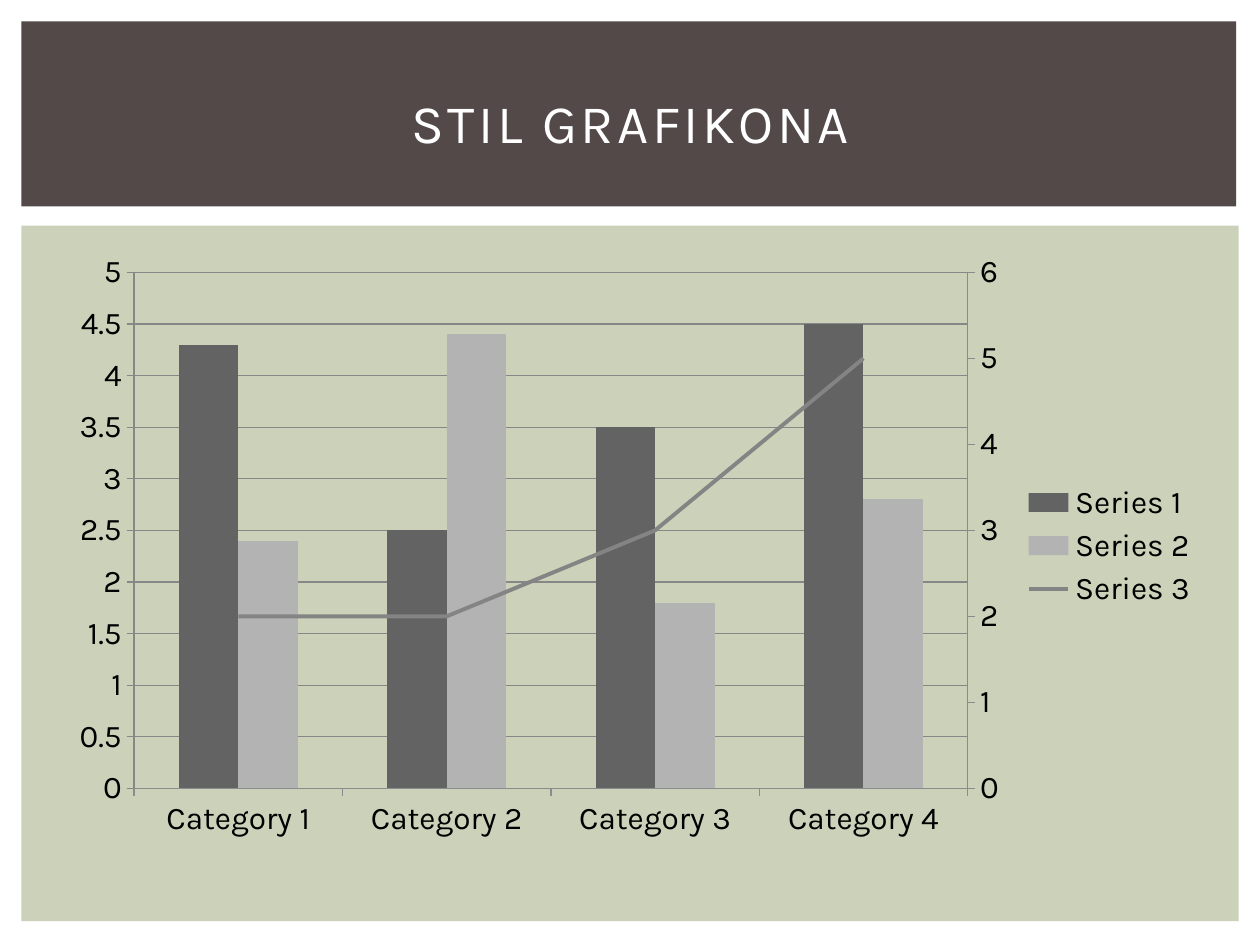
from lxml import etree
from pptx import Presentation
from pptx.chart.axis import ValueAxis
from pptx.chart.data import CategoryChartData
from pptx.dml.color import RGBColor
from pptx.enum.chart import (XL_CHART_TYPE, XL_LEGEND_POSITION,
                             XL_MARKER_STYLE, XL_TICK_MARK)
from pptx.enum.shapes import MSO_SHAPE
from pptx.enum.text import MSO_ANCHOR, PP_ALIGN
from pptx.oxml import parse_xml
from pptx.oxml.ns import nsdecls, qn
from pptx.util import Cm, Pt

COLUMNS = XL_CHART_TYPE.COLUMN_CLUSTERED
LEGEND_RIGHT = XL_LEGEND_POSITION.RIGHT
NO_MARKER = XL_MARKER_STYLE.NONE
TICK_OUT, TICK_NONE = XL_TICK_MARK.OUTSIDE, XL_TICK_MARK.NONE
RECTANGLE = MSO_SHAPE.RECTANGLE
MIDDLE, CENTER = MSO_ANCHOR.MIDDLE, PP_ALIGN.CENTER

FONT = "Karla"
COLORS = {
    "header": "534949", "panel": "CCD1B9", "title": "FFFFFF", "text": "000000",
    "axis": "8B8B8B", "Series 1": "636363", "Series 2": "B3B3B3",
    "Series 3": "848484",
}
CATEGORIES = [f"Category {number}" for number in range(1, 5)]
SERIES = {
    "Series 1": (4.3, 2.5, 3.5, 4.5),
    "Series 2": (2.4, 4.4, 1.8, 2.8),
    "Series 3": (2, 2, 3, 5),
}
PLOT_LAYOUT = {"x": 0.07, "y": 0.05, "w": 0.72, "h": 0.85}

LINE_PLOT = f"""<c:lineChart {nsdecls("c")}>
  <c:grouping val="standard"/><c:varyColors val="0"/>
  <c:marker val="1"/><c:axId val="5001"/><c:axId val="5002"/>
</c:lineChart>"""
RIGHT_AXIS = f"""<c:valAx {nsdecls("c")}>
  <c:axId val="5002"/><c:scaling><c:orientation val="minMax"/></c:scaling>
  <c:delete val="0"/><c:axPos val="r"/>
  <c:numFmt formatCode="General" sourceLinked="0"/>
  <c:tickLblPos val="nextTo"/><c:crossAx val="5001"/><c:crosses val="max"/>
</c:valAx>"""
HIDDEN_CATEGORY_AXIS = f"""<c:catAx {nsdecls("c")}>
  <c:axId val="5001"/><c:scaling><c:orientation val="minMax"/></c:scaling>
  <c:delete val="1"/><c:axPos val="b"/>
  <c:crossAx val="5002"/><c:crosses val="autoZero"/>
</c:catAx>"""


def color(name):
    return RGBColor.from_string(COLORS[name])


def set_values(target, values):
    for name, value in values.items():
        setattr(target, name, value)


def style_font(font, size, color_name):
    set_values(font, {"name": FONT, "size": Pt(size), "bold": False})
    font.color.rgb = color(color_name)


def style_line(line, color_name, width):
    line.color.rgb = color(color_name)
    line.width = Pt(width)


def add_band(page, color_name, left, top, width, height):
    band = page.shapes.add_shape(RECTANGLE, Cm(left), Cm(top), Cm(width), Cm(height))
    band.shadow.inherit = False
    band.fill.solid()
    band.fill.fore_color.rgb = color(color_name)
    band.line.fill.background()


def add_title(page, text):
    box = page.shapes.add_textbox(Cm(1.07), Cm(0.99), Cm(23.29), Cm(2.92))
    set_values(box.text_frame, {"word_wrap": True, "vertical_anchor": MIDDLE})
    para = box.text_frame.paragraphs[0]
    para.alignment = CENTER
    span = para.add_run()
    span.text = text
    style_font(span.font, 31, "title")
    span._r.get_or_add_rPr().set("spc", "200")


def set_plot_layout(plot_area):
    """Fix the inner plot rectangle as fractions of the chart."""
    for old_layout in plot_area.findall(qn("c:layout")):
        plot_area.remove(old_layout)
    layout = parse_xml(f"<c:layout {nsdecls('c')}/>")
    manual = etree.SubElement(layout, qn("c:manualLayout"))
    settings = {"layoutTarget": "inner", "xMode": "edge", "yMode": "edge", **PLOT_LAYOUT}
    for name, value in settings.items():
        etree.SubElement(manual, qn(f"c:{name}")).set("val", str(value))
    plot_area.insert(0, layout)


def move_last_series_to_line(plot_area):
    """Draw the last series as a line on a right-hand axis, which is returned."""
    columns = plot_area.find(qn("c:barChart"))
    series = columns.findall(qn("c:ser"))[-1]
    for flag in series.findall(qn("c:invertIfNegative")):
        series.remove(flag)
    line_plot = parse_xml(LINE_PLOT)
    line_plot.insert(2, series)
    columns.addnext(line_plot)
    right_axis = parse_xml(RIGHT_AXIS)
    plot_area.find(qn("c:valAx")).addnext(right_axis)
    right_axis.addnext(parse_xml(HIDDEN_CATEGORY_AXIS))
    return ValueAxis(right_axis)


def style_axis(axis, scale):
    set_values(axis, {"major_tick_mark": TICK_OUT, "minor_tick_mark": TICK_NONE,
                      "has_major_gridlines": False, **scale})
    style_line(axis.format.line, "axis", 0.75)
    style_font(axis.tick_labels.font, 18, "text")


def add_combined_chart(page):
    data = CategoryChartData(number_format="General")
    data.categories = CATEGORIES
    for name, values in SERIES.items():
        data.add_series(name, values)
    chart = page.shapes.add_chart(
        COLUMNS, Cm(1.07), Cm(4.88), Cm(23.34), Cm(12.24), data).chart
    set_values(chart, {"has_title": False, "has_legend": True})
    style_font(chart.font, 18, "text")
    set_values(chart.legend, {"position": LEGEND_RIGHT, "include_in_layout": False})
    style_font(chart.legend.font, 18, "text")

    plot_area = chart.element.find(".//" + qn("c:plotArea"))
    set_plot_layout(plot_area)
    right_axis = move_last_series_to_line(plot_area)
    style_axis(chart.category_axis, {})
    style_axis(chart.value_axis, {"minimum_scale": 0, "maximum_scale": 5,
                                  "major_unit": 0.5, "has_major_gridlines": True})
    style_line(chart.value_axis.major_gridlines.format.line, "axis", 0.75)
    style_axis(right_axis, {"minimum_scale": 0, "maximum_scale": 6, "major_unit": 1})

    columns, lines = chart.plots
    set_values(columns, {"gap_width": 150, "overlap": 0, "vary_by_categories": False})
    for series in columns.series:
        series.format.fill.solid()
        series.format.fill.fore_color.rgb = color(series.name)
    trend = lines.series[0]
    style_line(trend.format.line, trend.name, 2.25)
    trend.marker.style = NO_MARKER
    trend.smooth = False


def main():
    deck = Presentation()
    set_values(deck, {"slide_width": Cm(25.4), "slide_height": Cm(19.05)})
    page = deck.slides.add_slide(deck.slide_layouts[6])
    add_band(page, "panel", 0.43, 4.55, 24.54, 14.02)
    add_band(page, "header", 0.43, 0.43, 24.49, 3.73)
    add_combined_chart(page)
    add_title(page, "STIL GRAFIKONA")
    deck.save("out.pptx")


if __name__ == "__main__":
    main()
